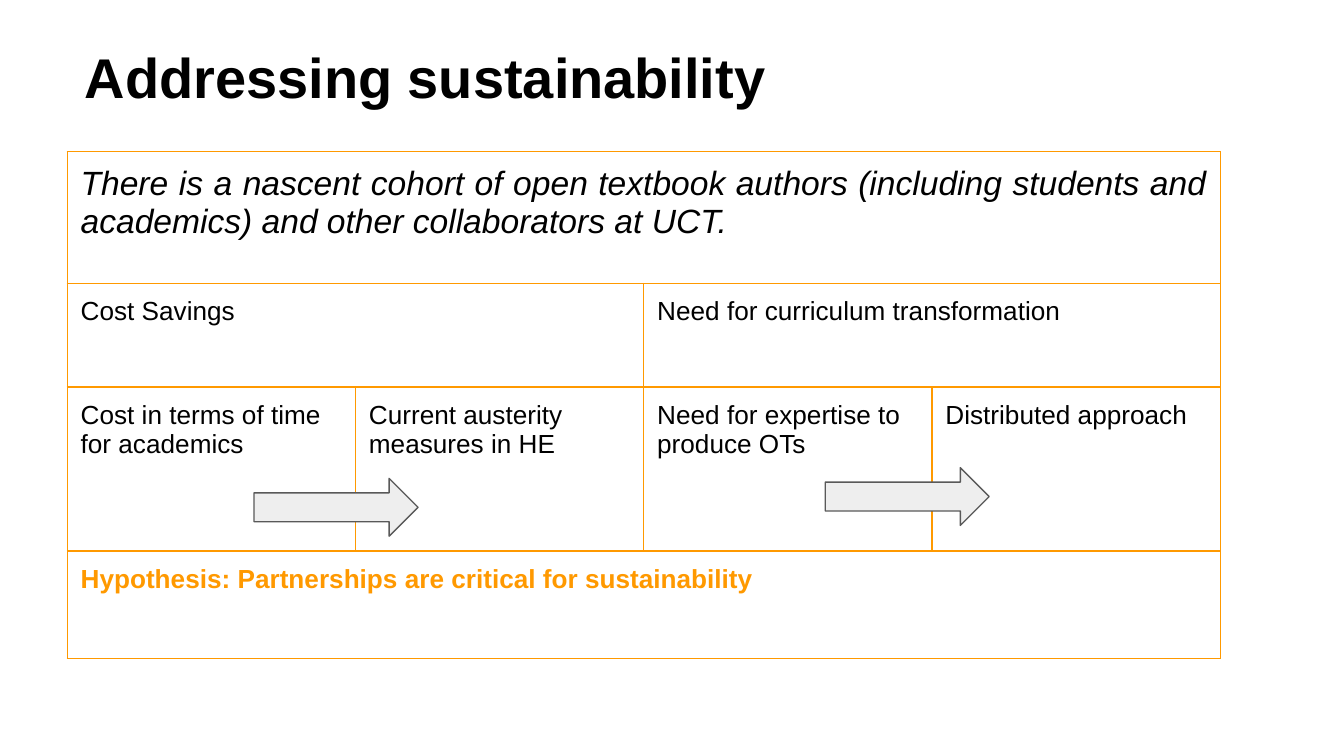
"""Build the slide on addressing sustainability."""
from dataclasses import dataclass

from lxml.etree import SubElement
from pptx import Presentation
from pptx.dml.color import RGBColor
from pptx.enum.shapes import MSO_SHAPE
from pptx.enum.text import MSO_ANCHOR, MSO_AUTO_SIZE, PP_ALIGN
from pptx.oxml.ns import qn
from pptx.util import Inches, Pt

BLACK = RGBColor(0x00, 0x00, 0x00)
ORANGE = RGBColor(0xFF, 0x99, 0x00)
ARROW_FILL = RGBColor(0xEE, 0xEE, 0xEE)
ARROW_LINE = RGBColor(0x59, 0x59, 0x59)

SLIDE_WIDTH = Inches(10)
SLIDE_HEIGHT = SLIDE_WIDTH * 9 // 16
COLUMN_WIDTH = 2.145
ROW_HEIGHTS = (0.98, 0.77, 1.22, 0.8)
MARGIN = Inches(0.1)
LINE_WIDTH = Pt(0.75)

MARGINS = {f"margin_{side}": MARGIN for side in ("left", "right", "top", "bottom")}
TITLE_FORMAT = {"name": "Arial", "size": Pt(30), "bold": True}
LEAD_FORMAT = {"name": "Arial", "size": Pt(18), "bold": False, "italic": True}
BODY_FORMAT = {"name": "Arial", "size": Pt(14), "bold": False, "italic": False}
HYPOTHESIS_FORMAT = BODY_FORMAT | {"bold": True}


@dataclass
class Entry:
    row: int
    column: int
    span: int
    text: str
    font_format: dict
    color: RGBColor = BLACK
    paragraph_format: dict | None = None


@dataclass
class Arrow:
    left: float
    top: float


ENTRIES = (
    Entry(0, 0, 4, "There is a nascent cohort of open textbook authors (including students and "
          "academics) and other collaborators at UCT.", LEAD_FORMAT,
          paragraph_format={"alignment": PP_ALIGN.JUSTIFY}),
    Entry(1, 0, 2, "Cost Savings", BODY_FORMAT),
    Entry(1, 2, 2, "Need for curriculum transformation", BODY_FORMAT),
    Entry(2, 0, 1, "Cost in terms of time for academics", BODY_FORMAT),
    Entry(2, 1, 1, "Current austerity measures in HE", BODY_FORMAT),
    Entry(2, 2, 1, "Need for expertise to produce OTs", BODY_FORMAT),
    Entry(2, 3, 1, "Distributed approach", BODY_FORMAT),
    Entry(3, 0, 4, "Hypothesis: Partnerships are critical for sustainability",
          HYPOTHESIS_FORMAT, ORANGE, {"space_after": Pt(12)}),
)
ARROWS = (Arrow(1.89, 3.56), Arrow(6.14, 3.48))


def set_attributes(target, values: dict) -> None:
    for name, value in values.items():
        setattr(target, name, value)


def write_text(frame, text: str, font_format: dict, color: RGBColor):
    para = frame.paragraphs[0]
    span = para.add_run()
    span.text = text
    set_attributes(span.font, font_format)
    span.font.color.rgb = color
    return para


def draw_title(slide, text: str) -> None:
    title = slide.shapes.title
    set_attributes(title, {"left": Inches(0.53), "top": Inches(0.22),
                           "width": Inches(5.89), "height": Inches(0.58)})
    frame = title.text_frame
    set_attributes(frame, MARGINS | {"vertical_anchor": MSO_ANCHOR.TOP, "word_wrap": True,
                                     "auto_size": MSO_AUTO_SIZE.NONE})
    para = write_text(frame, text, TITLE_FORMAT, BLACK)
    para.alignment = PP_ALIGN.LEFT


def draw_borders(cell) -> None:
    properties = cell._tc.get_or_add_tcPr()
    for position, tag in enumerate(("a:lnL", "a:lnR", "a:lnT", "a:lnB")):
        line = SubElement(properties, qn(tag), w=str(LINE_WIDTH))
        fill = SubElement(line, qn("a:solidFill"))
        SubElement(fill, qn("a:srgbClr"), val=str(ORANGE))
        SubElement(line, qn("a:prstDash"), val="solid")
        properties.insert(position, line)


def draw_table(slide, entries: tuple[Entry, ...]) -> None:
    frame = slide.shapes.add_table(len(ROW_HEIGHTS), 4, Inches(0.5), Inches(1.13),
                                   Inches(4 * COLUMN_WIDTH), Inches(sum(ROW_HEIGHTS)))
    table = frame.table
    set_attributes(table, {"first_row": False, "horz_banding": False})
    for column in table.columns:
        column.width = Inches(COLUMN_WIDTH)
    for row, height in zip(table.rows, ROW_HEIGHTS):
        row.height = Inches(height)
        for cell in row.cells:
            cell.fill.background()
            set_attributes(cell, MARGINS)
            draw_borders(cell)
    for entry in entries:
        cell = table.cell(entry.row, entry.column)
        if entry.span > 1:
            cell.merge(table.cell(entry.row, entry.column + entry.span - 1))
        para = write_text(cell.text_frame, entry.text, entry.font_format, entry.color)
        set_attributes(para, entry.paragraph_format or {})


def draw_arrow(slide, arrow: Arrow) -> None:
    shape = slide.shapes.add_shape(MSO_SHAPE.RIGHT_ARROW, Inches(arrow.left),
                                   Inches(arrow.top), Inches(1.22), Inches(0.43))
    shape.shadow.inherit = False
    shape.fill.solid()
    shape.fill.fore_color.rgb = ARROW_FILL
    shape.line.color.rgb = ARROW_LINE
    shape.line.width = LINE_WIDTH


def main() -> None:
    deck = Presentation()
    set_attributes(deck, {"slide_width": SLIDE_WIDTH, "slide_height": SLIDE_HEIGHT})
    slide = deck.slides.add_slide(deck.slide_layouts.get_by_name("Title Only"))
    draw_table(slide, ENTRIES)
    draw_title(slide, "Addressing sustainability")
    for arrow in ARROWS:
        draw_arrow(slide, arrow)
    deck.save("out.pptx")


if __name__ == "__main__":
    main()
